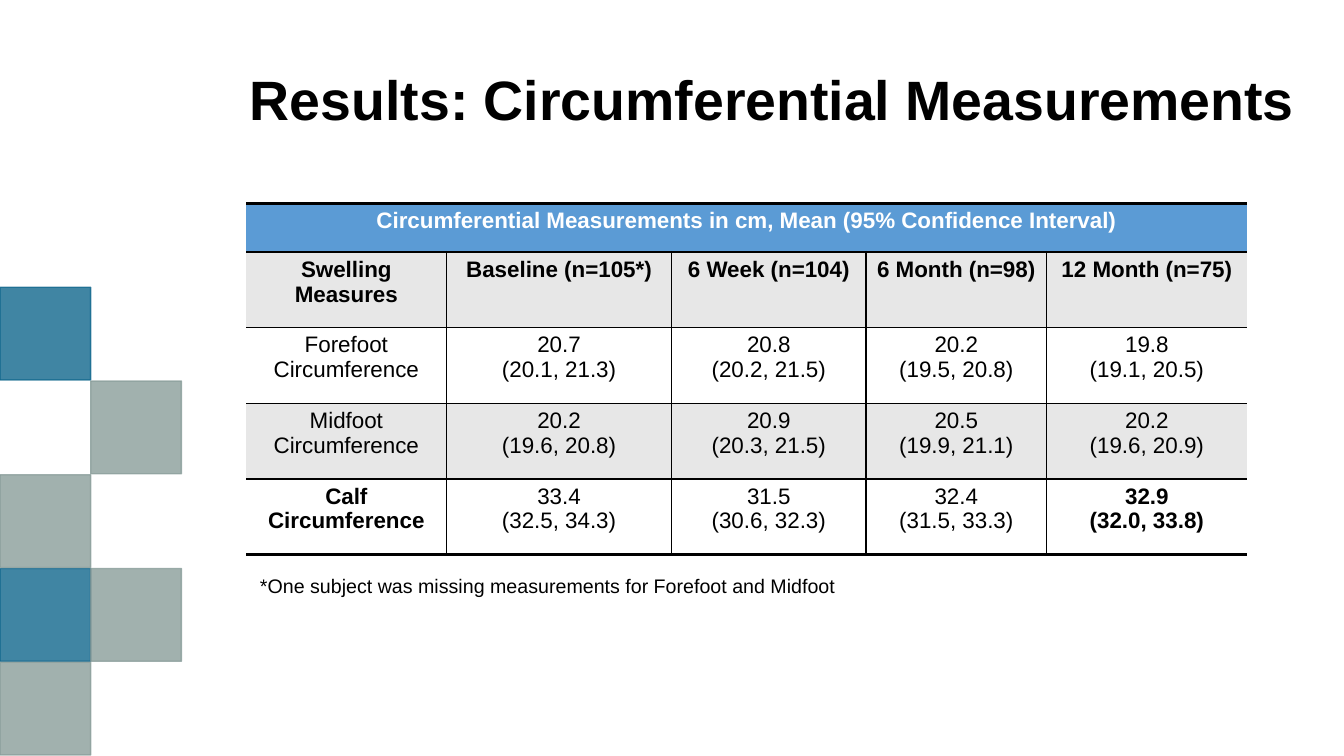
from dataclasses import dataclass
from typing import Any

from lxml.etree import SubElement
from pptx import Presentation
from pptx.dml.color import RGBColor
from pptx.enum.shapes import MSO_SHAPE
from pptx.enum.text import MSO_ANCHOR, PP_ALIGN
from pptx.oxml.ns import qn
from pptx.util import Inches, Pt


@dataclass(frozen=True)
class Theme:
    """Colours, font and type sizes of the slide."""

    font: str = "Arial"
    black: str = "000000"
    white: str = "FFFFFF"
    header: str = "5B9BD5"
    band: str = "E7E7E7"
    teal: str = "005D85"
    sage: str = "829794"
    tile_alpha: int = 75
    title_size: float = 39.6
    table_size: float = 16
    note_size: float = 14


@dataclass(frozen=True)
class Tile:
    """A decorative square at a column and row of the left-hand grid."""

    column: int
    row: int
    color: str


@dataclass(frozen=True)
class TextItem:
    """A text box with its place and character format."""

    text: str
    left: float
    top: float
    width: float
    height: float
    size: float
    bold: bool
    anchor: MSO_ANCHOR
    line_spacing: float


@dataclass(frozen=True)
class TableRow:
    """A table row with its fill, text colour and bold columns."""

    texts: tuple[str, ...]
    height: float
    fill: str
    color: str
    bold_columns: tuple[int, ...]


THEME = Theme()
TILE_WIDTH, TILE_HEIGHT = 0.9, 0.92
TILES_TOP, TILE_STEP = 2.85, 0.93
TILES = (
    Tile(0, 0, THEME.teal),
    Tile(0, 3, THEME.teal),
    Tile(0, 4, THEME.sage),
    Tile(1, 1, THEME.sage),
    Tile(1, 3, THEME.sage),
    Tile(0, 2, THEME.sage),
)
TITLE = TextItem("Results: Circumferential Measurements", 2.38, 0.51, 11.03, 1.02,
                 THEME.title_size, True, MSO_ANCHOR.MIDDLE, 0.9)
NOTE = TextItem("*One subject was missing measurements for Forefoot and Midfoot",
                2.48, 5.64, 9.84, 0.34, THEME.note_size, False, MSO_ANCHOR.TOP, 1.0)
TABLE_LEFT, TABLE_TOP = 2.44, 2.02
COLUMN_WIDTHS = (1.99, 2.23, 1.93, 1.79, 1.99)
EDGE_WIDTHS = (2, 2, 1, 1, 1.5, 2)
ROWS = (
    TableRow(("Circumferential Measurements in cm, Mean (95% Confidence Interval)",
              "", "", "", ""), 0.48, THEME.header, THEME.white, (0,)),
    TableRow(("Swelling Measures", "Baseline (n=105*)", "6 Week (n=104)",
              "6 Month (n=98)", "12 Month (n=75)"),
             0.75, THEME.band, THEME.black, (0, 1, 2, 3, 4)),
    TableRow(("Forefoot Circumference", "20.7\n(20.1, 21.3)", "20.8\n(20.2, 21.5)",
              "20.2\n(19.5, 20.8)", "19.8\n(19.1, 20.5)"),
             0.75, THEME.white, THEME.black, ()),
    TableRow(("Midfoot Circumference", "20.2\n(19.6, 20.8)", "20.9\n(20.3, 21.5)",
              "20.5\n(19.9, 21.1)", "20.2\n(19.6, 20.9)"),
             0.75, THEME.band, THEME.black, ()),
    TableRow(("Calf Circumference", "33.4\n(32.5, 34.3)", "31.5\n(30.6, 32.3)",
              "32.4\n(31.5, 33.3)", "32.9\n(32.0, 33.8)"),
             0.75, THEME.white, THEME.black, (0, 4)),
)


def apply_format(target: Any, values: dict[str, Any]) -> None:
    """Set each named attribute on the target."""
    for name, value in values.items():
        setattr(target, name, value)


def format_font(paragraph: Any, size: float, bold: bool, color: str) -> None:
    """Give the paragraph its font, size, weight and colour."""
    apply_format(paragraph.font, {"name": THEME.font, "size": Pt(size), "bold": bold})
    paragraph.font.color.rgb = RGBColor.from_string(color)


def add_tile(slide: Any, tile: Tile) -> None:
    """Draw one translucent square."""
    shape = slide.shapes.add_shape(
        MSO_SHAPE.RECTANGLE, Inches(tile.column * TILE_WIDTH),
        Inches(TILES_TOP + tile.row * TILE_STEP), Inches(TILE_WIDTH), Inches(TILE_HEIGHT))
    shape.shadow.inherit = False
    shape.line.width = Pt(1)
    for fill in (shape.fill, shape.line.fill):
        fill.solid()
        fill.fore_color.rgb = RGBColor.from_string(tile.color)
    for color in shape.element.spPr.iter(qn("a:srgbClr")):
        SubElement(color, qn("a:alpha"), val=str(THEME.tile_alpha * 1000))


def add_text(slide: Any, item: TextItem) -> None:
    """Draw one text box."""
    box = slide.shapes.add_textbox(Inches(item.left), Inches(item.top),
                                   Inches(item.width), Inches(item.height))
    apply_format(box.text_frame, {"word_wrap": True, "vertical_anchor": item.anchor,
                                  "text": item.text})
    paragraph = box.text_frame.paragraphs[0]
    paragraph.line_spacing = item.line_spacing
    format_font(paragraph, item.size, item.bold, THEME.black)


def add_borders(cell: Any, widths: dict[str, float]) -> None:
    """Draw the cell edges, leaving out those of zero width."""
    properties = cell._tc.get_or_add_tcPr()
    for side, width in widths.items():
        line = SubElement(properties, qn(f"a:ln{side}"), w=str(Pt(width)))
        if width:
            fill = SubElement(line, qn("a:solidFill"))
            SubElement(fill, qn("a:srgbClr"), val=THEME.black)
        else:
            SubElement(line, qn("a:noFill"))


def fill_cell(cell: Any, row: TableRow, row_index: int, column: int) -> None:
    """Give one cell its borders, fill and text."""
    inner = 1 if row_index else 0
    last = len(COLUMN_WIDTHS) - 1
    add_borders(cell, {
        "L": inner if column > 0 else 0,
        "R": inner if column < last else 0,
        "T": EDGE_WIDTHS[row_index],
        "B": EDGE_WIDTHS[row_index + 1],
    })
    cell.fill.solid()
    cell.fill.fore_color.rgb = RGBColor.from_string(row.fill)
    cell.text_frame.text = row.texts[column]
    for paragraph in cell.text_frame.paragraphs:
        paragraph.alignment = PP_ALIGN.CENTER
        format_font(paragraph, THEME.table_size, column in row.bold_columns, row.color)


def add_measurements(slide: Any) -> None:
    """Draw the table of measurements."""
    table = slide.shapes.add_table(
        len(ROWS), len(COLUMN_WIDTHS), Inches(TABLE_LEFT), Inches(TABLE_TOP),
        Inches(sum(COLUMN_WIDTHS)), Inches(sum(row.height for row in ROWS))).table
    apply_format(table, {"first_row": False, "horz_banding": False})
    for column, width in zip(table.columns, COLUMN_WIDTHS):
        column.width = Inches(width)
    for row_index, row in enumerate(ROWS):
        table.rows[row_index].height = Inches(row.height)
        for column in range(len(COLUMN_WIDTHS)):
            fill_cell(table.cell(row_index, column), row, row_index, column)
    table.cell(0, 0).merge(table.cell(0, len(COLUMN_WIDTHS) - 1))


def main() -> None:
    """Build and save the slide."""
    presentation = Presentation()
    apply_format(presentation, {"slide_width": Inches(13.33), "slide_height": Inches(7.5)})
    slide = presentation.slides.add_slide(presentation.slide_layouts[6])
    for tile in TILES:
        add_tile(slide, tile)
    add_text(slide, TITLE)
    add_measurements(slide)
    add_text(slide, NOTE)
    presentation.save("out.pptx")


if __name__ == "__main__":
    main()
